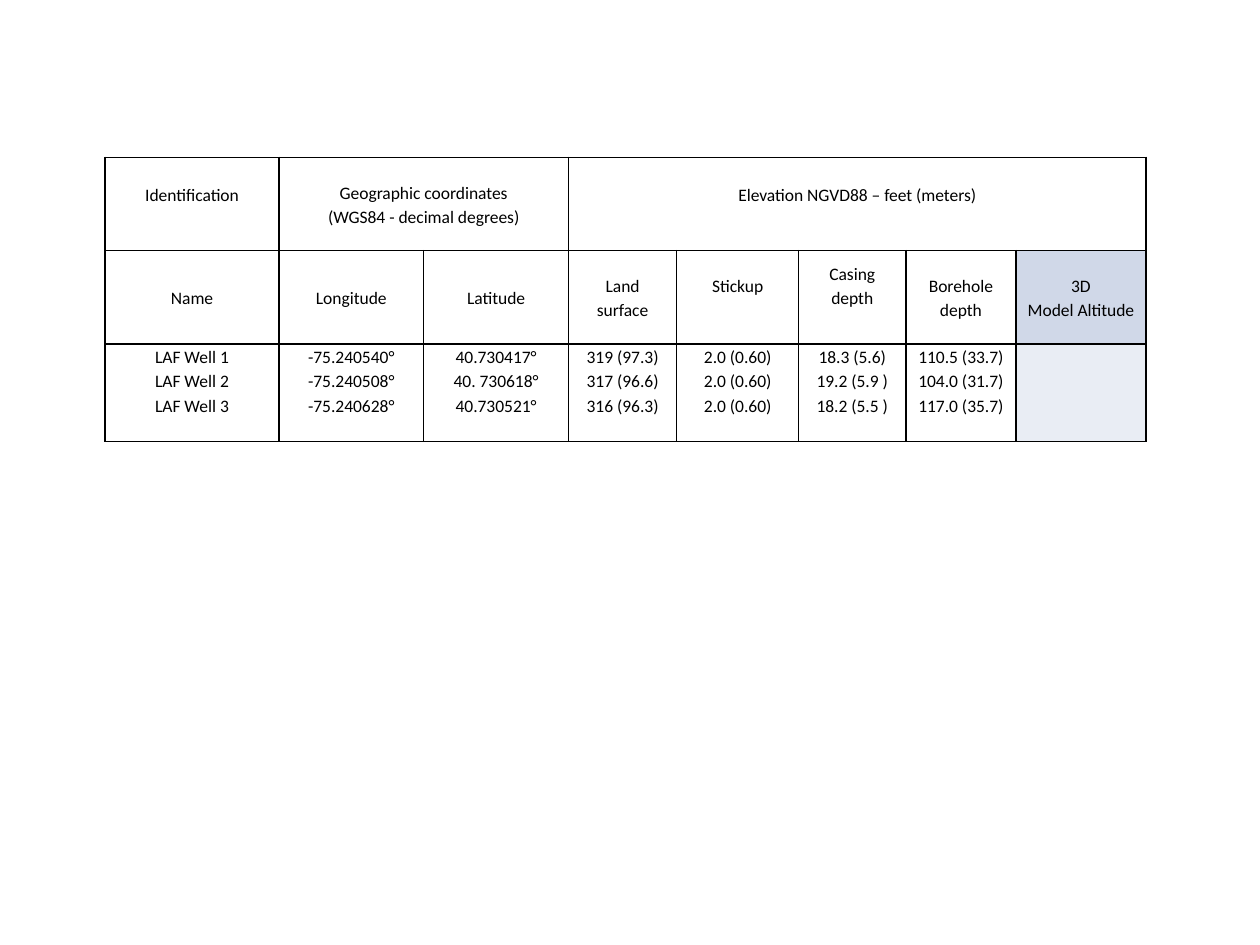
from dataclasses import dataclass

from lxml.etree import SubElement
from pptx import Presentation
from pptx.dml.color import RGBColor as RGB
from pptx.enum.text import MSO_ANCHOR as ANCHOR, PP_ALIGN as ALIGN
from pptx.oxml.ns import qn
from pptx.util import Cm, Pt


@dataclass(frozen=True)
class Theme:
    font: str = "Calibri"
    size: float = 10
    spacing: float = 1.15
    ink: str = "000000"
    head_fill: str = "D0D8E8"
    body_fill: str = "E9EDF4"
    border: float = 1


class SlideBuilder:
    def __init__(self, slide, theme):
        self.slide, self.theme = slide, theme

    def table(self, left, top, cols, rows):
        """Add an unfilled, bordered grid; lengths are in centimetres."""
        frame = self.slide.shapes.add_table(
            len(rows), len(cols), Cm(left), Cm(top), Cm(sum(cols)), Cm(sum(rows)))
        table = frame.table
        table.first_row = table.horz_banding = False
        for col, width in zip(table.columns, cols):
            col.width = Cm(width)
        for row, height in zip(table.rows, rows):
            row.height = Cm(height)
            for cell in row.cells:
                self.borders(cell)
                cell.fill.background()
        return table

    def borders(self, cell):
        tc_pr = cell._tc.get_or_add_tcPr()
        for side in ("lnL", "lnR", "lnT", "lnB"):
            ln = SubElement(tc_pr, qn(f"a:{side}"), w=str(Pt(self.theme.border)))
            fill = SubElement(ln, qn("a:solidFill"))
            SubElement(fill, qn("a:srgbClr"), val=self.theme.ink)

    def fill(self, cell, color):
        cell.fill.solid()
        cell.fill.fore_color.rgb = RGB.from_string(color)

    def text(self, cell, text, anchor=ANCHOR.MIDDLE, above=0, below=0):
        cell.margin_left = cell.margin_right = Cm(0.18)
        cell.margin_top, cell.margin_bottom = Cm(above), Cm(below)
        cell.vertical_anchor = anchor
        tf = cell.text_frame
        tf.text = text
        for p in tf.paragraphs:
            p.alignment = ALIGN.CENTER
            p.line_spacing = self.theme.spacing
            for r in p.runs:
                r.font.name = self.theme.font
                r.font.size = Pt(self.theme.size)
                r.font.color.rgb = RGB.from_string(self.theme.ink)


LINE = 0.5  # height of one text line, cm

# Column groups: label, first and last column, anchor, space above
GROUPS = [
    ("Identification", 0, 0, ANCHOR.TOP, LINE),
    ("Geographic coordinates\n(WGS84 - decimal degrees)", 1, 2, ANCHOR.MIDDLE, 0),
    ("Elevation NGVD88 – feet (meters)", 3, 7, ANCHOR.TOP, LINE),
]
# Column headings with the space kept below each
HEADINGS = [
    ("Name", 0), ("Longitude", 0), ("Latitude", 0), ("Land\nsurface", 0),
    ("Stickup", LINE), ("Casing depth", LINE), ("Borehole depth", 0),
    ("3D\nModel Altitude", 0),
]
WELLS = [
    ("LAF Well 1", "-75.240540°", "40.730417°", "319 (97.3)",
     "2.0 (0.60)", "18.3 (5.6)", "110.5 (33.7)"),
    ("LAF Well 2", "-75.240508°", "40. 730618°", "317 (96.6)",
     "2.0 (0.60)", "19.2 (5.9 )", "104.0 (31.7)"),
    ("LAF Well 3", "-75.240628°", "40.730521°", "316 (96.3)",
     "2.0 (0.60)", "18.2 (5.5 )", "117.0 (35.7)"),
]


def main():
    prs = Presentation()
    prs.slide_width, prs.slide_height = Cm(25.4), Cm(19.05)
    theme = Theme()
    s = SlideBuilder(prs.slides.add_slide(prs.slide_layouts[6]), theme)

    # Grid
    table = s.table(2.12, 3.17, cols=[3.5, 2.92, 2.92, 2.18, 2.46, 2.16, 2.22, 2.62],
                    rows=[1.88, 1.88, 1.97])

    # Group headings
    for label, first, last, anchor, above in GROUPS:
        cell = table.cell(0, first)
        if last > first:
            cell.merge(table.cell(0, last))
        s.text(cell, label, anchor, above=above)

    # Column headings
    for col, (label, below) in enumerate(HEADINGS):
        s.text(table.cell(1, col), label, below=below)

    # Well data, one line per well
    for col, values in enumerate(zip(*WELLS)):
        s.text(table.cell(2, col), "\n".join(values), ANCHOR.TOP)

    # Shaded model column
    s.fill(table.cell(1, 7), theme.head_fill)
    s.fill(table.cell(2, 7), theme.body_fill)

    prs.save("out.pptx")


if __name__ == "__main__":
    main()
